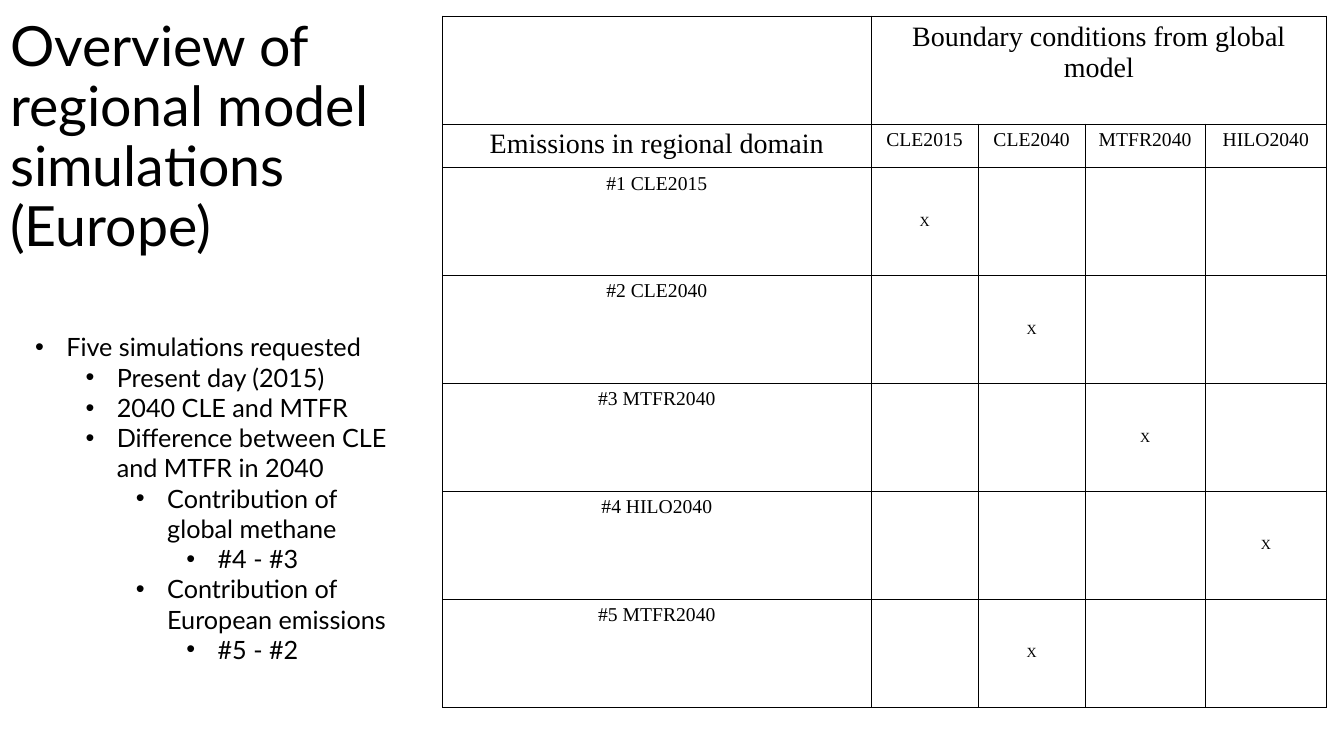
from lxml.etree import SubElement
from pptx import Presentation
from pptx.dml.color import RGBColor
from pptx.enum.text import MSO_ANCHOR as Anchor, MSO_AUTO_SIZE as AutoSize, PP_ALIGN as Align
from pptx.oxml.ns import qn
from pptx.util import Inches, Pt

COLS, ROWS = 160, 90  # slide grid
INK = "000000"
SANS, SERIF = "Lato", "Times New Roman"

TITLE = "Overview of regional model simulations (Europe)"
BULLETS = [
    (0, "Five simulations requested"),
    (1, "Present day (2015)"),
    (1, "2040 CLE and MTFR"),
    (1, "Difference between CLE and MTFR in 2040"),
    (2, "Contribution of global methane"),
    (3, "#4 - #3"),
    (2, "Contribution of European emissions"),
    (3, "#5 - #2"),
]
BOUNDARIES = ["CLE2015", "CLE2040", "MTFR2040", "HILO2040"]
# Regional emissions and the global boundary each one is run with
RUNS = [
    ("#1 CLE2015", "CLE2015"),
    ("#2 CLE2040", "CLE2040"),
    ("#3 MTFR2040", "MTFR2040"),
    ("#4 HILO2040", "HILO2040"),
    ("#5 MTFR2040", "CLE2040"),
]


def color(value):
    return RGBColor.from_string(value)


def apply(target, values):
    for name, value in values.items():
        setattr(target, name, value)


class Deck:
    def __init__(self):
        self.prs = Presentation()
        apply(self.prs, {"slide_width": Inches(13.33), "slide_height": Inches(7.5)})
        self.slide = self.prs.slides.add_slide(self.prs.slide_layouts[5])

    def x(self, cols):
        return round(self.prs.slide_width * cols / COLS)

    def y(self, rows):
        return round(self.prs.slide_height * rows / ROWS)

    def box(self, left, top, width, height):
        return self.x(left), self.y(top), self.x(width), self.y(height)

    def add_text(self, p, text, size, font):
        r = p.add_run()
        r.text = text
        apply(r.font, {"size": Pt(size), "name": font})
        r.font.color.rgb = color(INK)

    def title(self, text, box, size, lift):
        sp = self.slide.shapes.title
        apply(sp, dict(zip(("left", "top", "width", "height"), self.box(*box))))
        tf = sp.text_frame
        apply(tf, {"word_wrap": True, "auto_size": AutoSize.NONE,
                   "vertical_anchor": Anchor.MIDDLE, "margin_bottom": self.y(lift)})
        p = tf.paragraphs[0]
        apply(p, {"alignment": Align.LEFT, "line_spacing": 0.9})
        self.add_text(p, text, size, SANS)

    def bullets(self, items, box, size):
        tf = self.slide.shapes.add_textbox(*self.box(*box)).text_frame
        apply(tf, {"word_wrap": True, "auto_size": AutoSize.SHAPE_TO_FIT_TEXT})
        for i, (level, text) in enumerate(items):
            p = tf.add_paragraph() if i else tf.paragraphs[0]
            p.level = level
            pPr = p._p.get_or_add_pPr()
            pPr.set("marL", str(Inches(0.31 + 0.5 * level)))
            pPr.set("indent", str(-Inches(0.31)))
            SubElement(pPr, qn("a:buFont"), typeface="Arial")
            SubElement(pPr, qn("a:buChar"), char="•")
            self.add_text(p, text, size, SANS)

    def table(self, left, top, widths, heights):
        box = self.box(left, top, sum(widths), sum(heights))
        tbl = self.slide.shapes.add_table(len(heights), len(widths), *box).table
        apply(tbl, {"first_row": False, "horz_banding": False})
        for col, width in zip(tbl.columns, widths):
            col.width = self.x(width)
        for row, height in zip(tbl.rows, heights):
            row.height = self.y(height)
        for cell in tbl.iter_cells():
            self.border(cell)
            cell.fill.background()
        return tbl

    def border(self, cell):
        tcPr = cell._tc.get_or_add_tcPr()
        for side in ("a:lnL", "a:lnR", "a:lnT", "a:lnB"):
            ln = SubElement(tcPr, qn(side), w=str(Pt(0.5)))
            fill = SubElement(ln, qn("a:solidFill"))
            SubElement(fill, qn("a:srgbClr"), val=INK)

    def cell(self, cell, text, size, anchor=Anchor.TOP):
        apply(cell, {"vertical_anchor": anchor,
                     "margin_left": Inches(0.08), "margin_right": Inches(0.08),
                     "margin_top": Inches(0.05), "margin_bottom": Inches(0.05)})
        p = cell.text_frame.paragraphs[0]
        p.alignment = Align.CENTER
        self.add_text(p, text, size, SERIF)


def main():
    deck = Deck()

    # Left column: title and bullets
    deck.title(TITLE, (0, 14.9, 45.1, 17.4), 39.6, lift=14.8)
    deck.bullets(BULLETS, (3, 38.9, 46.2, 41.2), 18)

    # Simulation matrix: headings
    run_height = 12.85
    tbl = deck.table(52.7, 1.9, [51, 12.75, 12.75, 14.25, 14.5],
                     [run_height, 5.2] + [run_height] * len(RUNS))
    tbl.cell(0, 1).merge(tbl.cell(0, len(BOUNDARIES)))
    deck.cell(tbl.cell(0, 1), "Boundary conditions from global model", 20)
    deck.cell(tbl.cell(1, 0), "Emissions in regional domain", 20)
    for col, name in enumerate(BOUNDARIES, 1):
        deck.cell(tbl.cell(1, col), name, 14)

    # Simulation matrix: one row per run
    for row, (emissions, boundary) in enumerate(RUNS, 2):
        deck.cell(tbl.cell(row, 0), emissions, 14)
        mark = tbl.cell(row, BOUNDARIES.index(boundary) + 1)
        deck.cell(mark, "X", 10, Anchor.MIDDLE)

    deck.prs.save("out.pptx")


if __name__ == "__main__":
    main()
